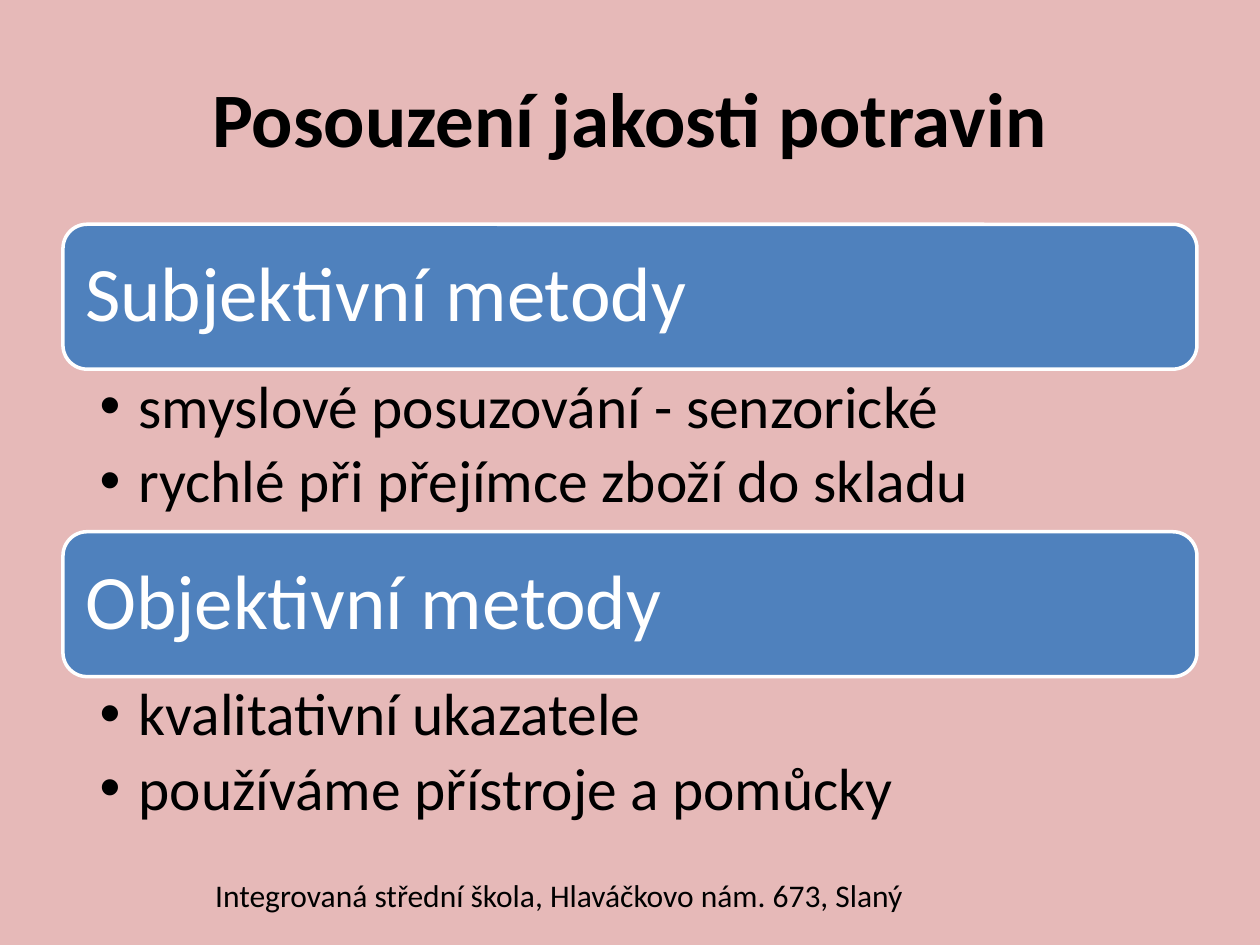
from lxml import etree
from pptx import Presentation
from pptx.dml.color import RGBColor
from pptx.enum import shapes, text
from pptx.oxml.ns import qn
from pptx.util import Inches, Pt

COLORS = {"back": "E6B9B8", "bar": "4F81BD", "light": "FFFFFF", "dark": "000000"}
FONT = "Calibri"
BAR, LIST = 1.15, 1.29
LEFT, TOP, WIDTH = 0.5, 1.78, 9

GROUPS = [
    ("Subjektivní metody",
     ["smyslové posuzování - senzorické", "rychlé při přejímce zboží do skladu"]),
    ("Objektivní metody",
     ["kvalitativní ukazatele", "používáme přístroje a pomůcky"]),
]


def color(name):
    return RGBColor.from_string(COLORS[name])


class Page:
    """Holds the slide and its text style."""

    def __init__(self, deck):
        self.slide = deck.slides.add_slide(deck.slide_layouts[6])
        fill = self.slide.background.fill
        fill.solid()
        fill.fore_color.rgb = color("back")

    def add_run(self, para, words, size, tint="dark", bold=False):
        run = para.add_run()
        run.text = words
        font = run.font
        font.name, font.size, font.bold = FONT, Pt(size), bold
        font.color.rgb = color(tint)

    def frame(self, shape, inset, anchor):
        """Set wrapping, anchor and insets (left, top, right, bottom)."""
        frame = shape.text_frame
        frame.word_wrap = True
        frame.vertical_anchor = anchor
        (frame.margin_left, frame.margin_top,
         frame.margin_right, frame.margin_bottom) = map(Inches, inset)
        return frame

    def box(self, area, inset=(0.1, 0.05, 0.1, 0.05), anchor=text.MSO_ANCHOR.TOP):
        shape = self.slide.shapes.add_textbox(*map(Inches, area))
        return self.frame(shape, inset, anchor)

    def title(self, words, area):
        para = self.box(area, anchor=text.MSO_ANCHOR.MIDDLE).paragraphs[0]
        para.alignment = text.PP_ALIGN.CENTER
        self.add_run(para, words, 44, bold=True)

    def bar(self, words, area):
        shape = self.slide.shapes.add_shape(
            shapes.MSO_SHAPE.ROUNDED_RECTANGLE, *map(Inches, area))
        shape.shadow.inherit = False
        shape.fill.solid()
        shape.fill.fore_color.rgb = color("bar")
        shape.line.color.rgb = color("light")
        shape.line.width = Pt(2)
        frame = self.frame(shape, (0.12,) * 4, text.MSO_ANCHOR.MIDDLE)
        para = frame.paragraphs[0]
        para.alignment = text.PP_ALIGN.LEFT
        para.line_spacing = 0.9
        self.add_run(para, words, 44, "light")

    def bullets(self, items, area):
        frame = self.box(area, (0.29, 0.06, 0.34, 0.06))
        for i, words in enumerate(items):
            para = frame.add_paragraph() if i else frame.paragraphs[0]
            para.level = 1
            para.line_spacing = 0.9
            para.space_after = Pt(6)
            props = para._p.get_or_add_pPr()
            props.set("marL", str(Inches(0.31)))
            props.set("indent", str(-Inches(0.31)))
            etree.SubElement(props, qn("a:buFont")).set("typeface", "Arial")
            etree.SubElement(props, qn("a:buChar")).set("char", "•")
            self.add_run(para, words, 34)

    def note(self, words, area):
        self.add_run(self.box(area).paragraphs[0], words, 18)


def main():
    deck = Presentation()
    deck.slide_width, deck.slide_height = Inches(10), Inches(7.5)
    page = Page(deck)
    page.title("Posouzení jakosti potravin", (LEFT, 0.3, WIDTH, 1.25))
    for i, (head, items) in enumerate(GROUPS):
        top = TOP + i * (BAR + LIST)
        page.bar(head, (LEFT, top, WIDTH, BAR))
        page.bullets(items, (LEFT, top + BAR, WIDTH, LIST))
    page.note("Integrovaná střední škola, Hlaváčkovo nám. 673, Slaný",
              (1.61, 6.9, 7.4, 0.4))
    deck.save("out.pptx")


if __name__ == "__main__":
    main()
